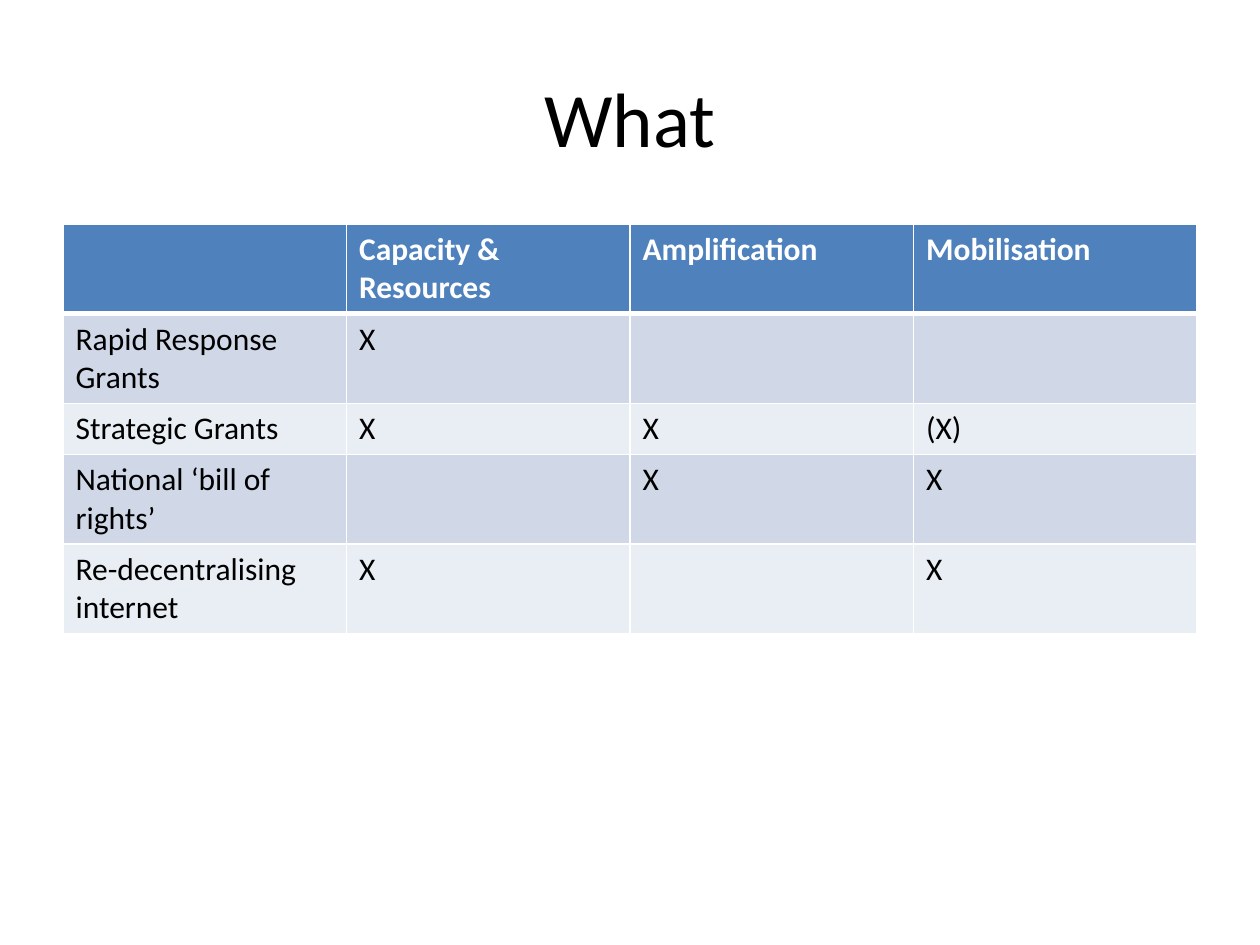
from lxml.etree import SubElement
from pptx import Presentation
from pptx.dml.color import RGBColor as Rgb
from pptx.enum.text import MSO_ANCHOR as Anchor, PP_ALIGN as Align
from pptx.oxml.ns import qn
from pptx.util import Cm, Pt

TITLE = "What"
ROWS = [
    ["", "Capacity & Resources", "Amplification", "Mobilisation"],
    ["Rapid Response Grants", "X", "", ""],
    ["Strategic Grants", "X", "X", "(X)"],
    ["National ‘bill of rights’", "", "X", "X"],
    ["Re-decentralising internet", "X", "", "X"],
]
COLOURS = {
    "header": "4F81BD",
    "odd": "D0D8E8",
    "even": "E9EDF4",
    "white": "FFFFFF",
    "black": "000000",
}
FONT = "Calibri"
LEFT, WIDTH = Cm(1.27), Cm(22.86)
TABLE_TOP, ROW_HEIGHT = Cm(4.52), Cm(1.03)


def colour(name):
    return Rgb.from_string(COLOURS[name])


def add_run(para, text, size, colour_name, bold=False):
    span = para.add_run()
    span.text = text
    span.font.name = FONT
    span.font.size = Pt(size)
    span.font.bold = bold
    span.font.color.rgb = colour(colour_name)


def add_borders(cell, widths):
    """Draw white cell borders; widths maps L, R, T, B (in that order) to points."""
    properties = cell._tc.get_or_add_tcPr()
    for side, width in widths.items():
        line = SubElement(properties, qn(f"a:ln{side}"), w=str(Pt(width)))
        fill = SubElement(line, qn("a:solidFill"))
        SubElement(fill, qn("a:srgbClr"), val=COLOURS["white"])


def fill_cell(cell, text, row_index):
    is_header = row_index == 0
    add_borders(cell, {"L": 1, "R": 1, "T": 3 if row_index == 1 else 1,
                       "B": 3 if is_header else 1})
    band = "header" if is_header else "odd" if row_index % 2 else "even"
    cell.fill.solid()
    cell.fill.fore_color.rgb = colour(band)
    para = cell.text_frame.paragraphs[0]
    if text:
        add_run(para, text, 18, "white" if is_header else "black", is_header)


def add_title(page):
    title = page.shapes.title
    title.left, title.top, title.width, title.height = LEFT, Cm(0.76), WIDTH, Cm(3.18)
    title.text_frame.vertical_anchor = Anchor.MIDDLE
    para = title.text_frame.paragraphs[0]
    para.alignment = Align.CENTER
    add_run(para, TITLE, 44, "black")


def add_grid(page):
    row_count, column_count = len(ROWS), len(ROWS[0])
    table = page.shapes.add_table(row_count, column_count, LEFT, TABLE_TOP,
                                  WIDTH, ROW_HEIGHT * row_count).table
    for row_index, texts in enumerate(ROWS):
        for column_index, text in enumerate(texts):
            fill_cell(table.cell(row_index, column_index), text, row_index)


def main():
    deck = Presentation()
    deck.slide_width, deck.slide_height = Cm(25.4), Cm(19.05)
    page = deck.slides.add_slide(deck.slide_layouts[5])
    add_title(page)
    add_grid(page)
    deck.save("out.pptx")


if __name__ == "__main__":
    main()
